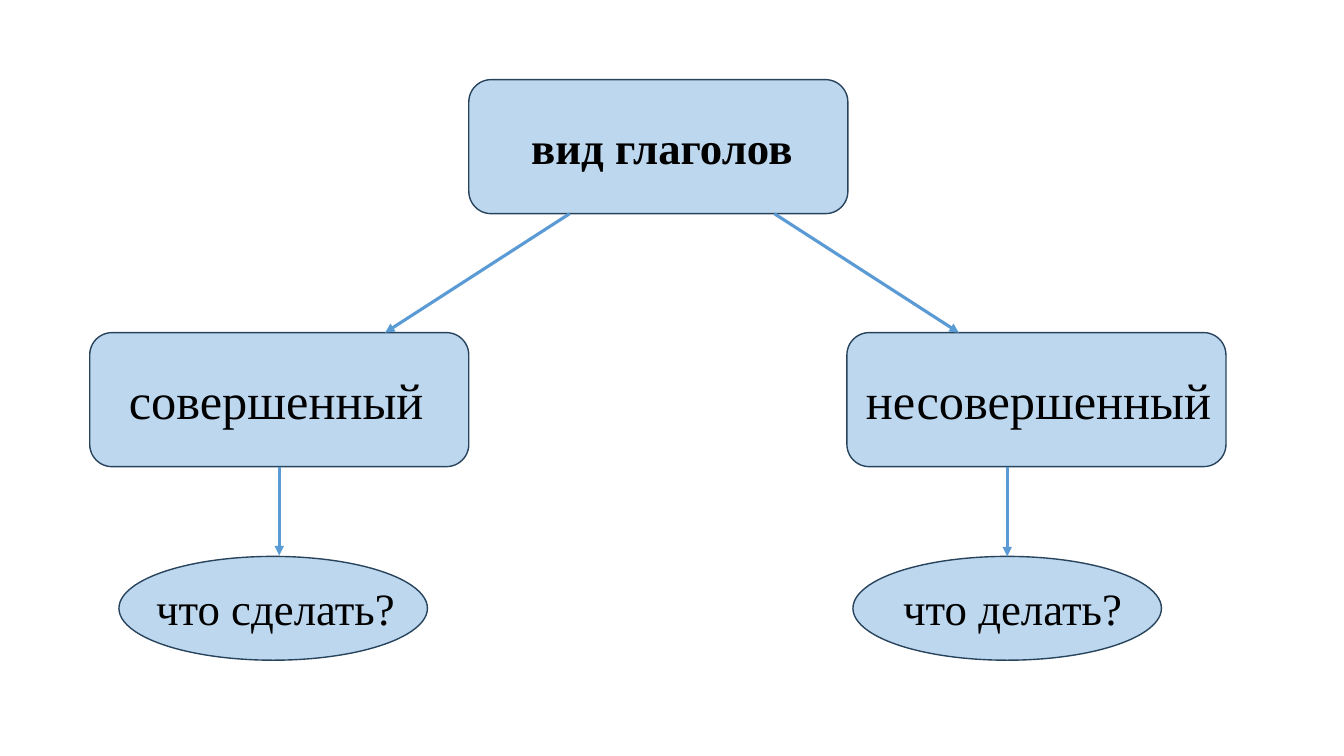
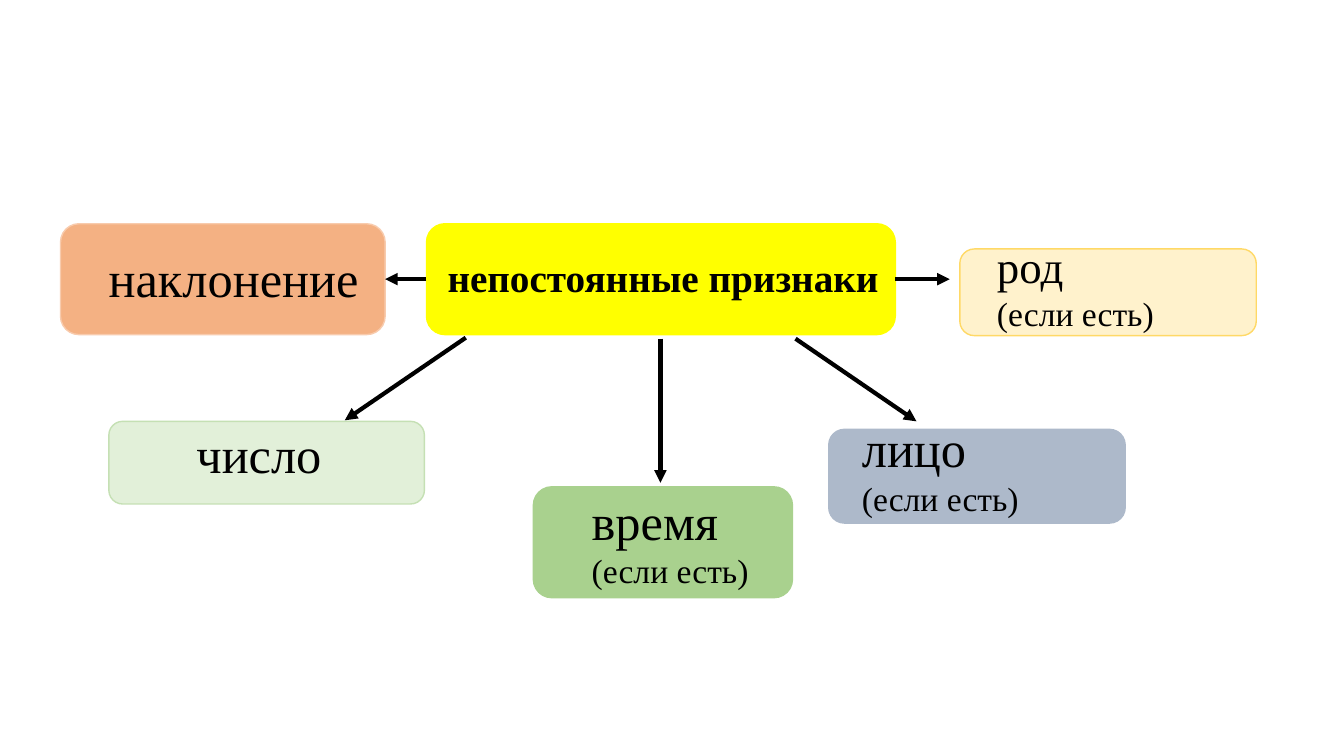
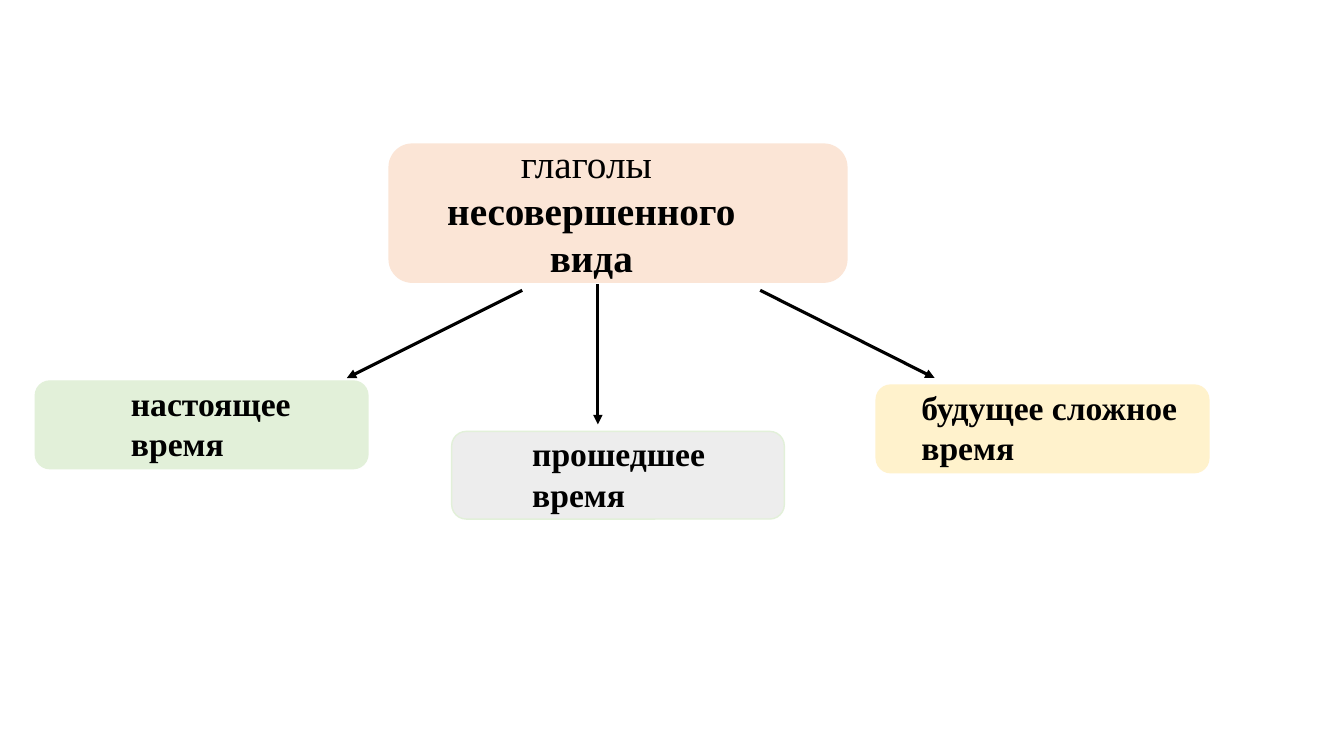
from lxml.etree import SubElement
from pptx import Presentation
from pptx.dml.color import RGBColor
from pptx.enum.shapes import MSO_CONNECTOR as Connector, MSO_SHAPE as Preset
from pptx.enum.text import MSO_AUTO_SIZE as AutoSize, PP_ALIGN as Align
from pptx.oxml.ns import qn
from pptx.util import Inches, Pt

FONT = "Times New Roman"
COLORS = {
    "black": "000000", "sky": "BDD7EE", "navy": "28445D", "blue": "5B9BD5",
    "green": "A9D18E", "mint": "E2F0D9", "leaf": "C5E0B4",
    "orange": "F4B183", "peach": "F8CBAD", "blush": "FBE5D6",
    "cream": "FFF2CC", "gold": "FFD966", "yellow": "FFFF00",
    "slate": "ADB9CA", "gray": "EDEDED",
}
TOP, LEFT, BOTTOM, RIGHT = range(4)
ROUND, OVAL = Preset.ROUNDED_RECTANGLE, Preset.OVAL

ASPECT_BOX = (3.76, 1.33)
QUESTION_OVAL = (3.06, 1.03)
TENSE_BOX = (3.3, 0.87)
IF_PRESENT = ("(если есть)", 24, False)

# node: name -> (preset, (left, top), (width, height), fill, outline)
# label: (left, top, width, height), alignment, [(text, size, bold)]
# arrow end: (x, y) or (node name, side)
SLIDES = [
    {
        "nodes": {
            "aspect": (ROUND, (4.65, 0.79), ASPECT_BOX, "sky", "navy"),
            "perfective": (ROUND, (0.89, 3.3), ASPECT_BOX, "sky", "navy"),
            "imperfective": (ROUND, (8.4, 3.3), ASPECT_BOX, "sky", "navy"),
            "perfective question": (OVAL, (1.18, 5.52), QUESTION_OVAL, "sky", "navy"),
            "imperfective question": (OVAL, (8.46, 5.52), QUESTION_OVAL, "sky", "navy"),
        },
        "arrow_style": ("blue", 2.25),
        "arrows": [
            ((5.65, 2.12), (3.82, 3.3)),
            ((7.68, 2.12), (9.51, 3.3)),
            (("perfective", BOTTOM), (2.77, 5.51)),
            ((9.99, 4.63), ("imperfective question", TOP)),
        ],
        "labels": [
            ((5.17, 1.14, 2.96, 0.64), Align.LEFT, [("вид глаголов", 32, True)]),
            ((1.18, 3.61, 3.46, 0.71), Align.LEFT, [("совершенный", 36, False)]),
            ((8.49, 3.61, 3.79, 0.71), Align.LEFT, [("несовершенный", 36, False)]),
            ((1.45, 5.71, 3.42, 0.64), Align.LEFT, [("что сделать?", 32, False)]),
            ((8.86, 5.71, 3.42, 0.64), Align.LEFT, [("что делать?", 32, False)]),
        ],
    },
    {
        "nodes": {
            "features": (ROUND, (4.23, 2.22), (4.65, 1.1), "yellow", "yellow"),
            "mood": (ROUND, (0.6, 2.22), (3.22, 1.1), "orange", "peach"),
            "number": (ROUND, (1.08, 4.18), (3.13, 0.82), "mint", "leaf"),
            "tense": (ROUND, (5.29, 4.83), (2.57, 1.1), "green", "green"),
            "person": (ROUND, (8.22, 4.26), (2.94, 0.93), "slate", "slate"),
            "gender": (ROUND, (9.52, 2.47), (2.94, 0.86), "cream", "gold"),
        },
        "arrow_style": ("black", 3),
        "arrows": [
            (("features", LEFT), ("mood", RIGHT)),
            ((4.62, 3.35), (3.42, 4.17)),
            ((6.55, 3.36), (6.55, 4.79)),
            ((7.89, 3.36), (9.09, 4.18)),
            (("features", RIGHT), (9.42, 2.77)),
        ],
        "labels": [
            ((4.34, 2.46, 4.65, 0.57), Align.LEFT, [("непостоянные признаки", 28, True)]),
            ((0.98, 2.4, 2.83, 0.71), Align.LEFT, [("наклонение", 36, False)]),
            ((1.85, 4.15, 1.69, 0.71), Align.LEFT, [("число", 36, False)]),
            ((5.77, 4.81, 3.79, 1.11), Align.LEFT, [("время", 36, False), IF_PRESENT]),
            ((8.45, 4.09, 2.71, 1.11), Align.LEFT, [("лицо", 36, False), IF_PRESENT]),
            ((9.79, 2.32, 2.94, 1.04), Align.LEFT, [("род", 32, False), IF_PRESENT]),
        ],
    },
    {
        "nodes": {
            "imperfective verbs": (ROUND, (3.86, 1.43), (4.54, 1.37), "blush", "blush"),
            "present": (ROUND, (0.35, 3.78), TENSE_BOX, "mint", "mint"),
            "past": (ROUND, (4.48, 4.28), TENSE_BOX, "gray", "mint"),
            "future": (ROUND, (8.69, 3.82), TENSE_BOX, "cream", "cream"),
        },
        "arrow_style": ("black", 2.25),
        "arrows": [
            ((5.18, 2.88), (3.44, 3.75)),
            ((5.93, 2.82), (5.93, 4.21)),
            ((7.54, 2.88), (9.27, 3.75)),
        ],
        "labels": [
            ((4.25, 1.33, 3.23, 1.51), Align.CENTER,
             [("глаголы ", 28, False), ("несовершенного вида", 28, True)]),
            ((1.2, 3.75, 2.61, 0.91), Align.LEFT,
             [("настоящее", 24, True), ("время", 24, True)]),
            ((5.18, 4.25, 2.61, 0.91), Align.LEFT,
             [("прошедшее", 24, True), ("время", 24, True)]),
            ((9.04, 3.79, 3.3, 0.91), Align.LEFT,
             [("будущее сложное", 24, True), ("время", 24, True)]),
        ],
    },
]


def rgb(color):
    return RGBColor.from_string(COLORS[color])


def add_node(slide, preset, corner, size, fill, outline):
    node = slide.shapes.add_shape(preset, *map(Inches, corner + size))
    node.shadow.inherit = False
    node.fill.solid()
    node.fill.fore_color.rgb = rgb(fill)
    node.line.color.rgb = rgb(outline)
    node.line.width = Pt(1)
    return node


def add_arrow(slide, nodes, start, end, color, width):
    """Draw an arrow, joining each end that names a node to its side."""
    free_ends = [(0, 0) if point[0] in nodes else point for point in (start, end)]
    arrow = slide.shapes.add_connector(
        Connector.STRAIGHT, *(Inches(value) for point in free_ends for value in point))
    for (target, side), join in ((start, arrow.begin_connect), (end, arrow.end_connect)):
        if target in nodes:
            join(nodes[target], side)
    arrow.line.color.rgb = rgb(color)
    arrow.line.width = Pt(width)
    SubElement(arrow.line._get_or_add_ln(), qn("a:tailEnd"), type="triangle")
    SubElement(arrow._element.spPr, qn("a:effectLst"))


def add_label(slide, box, alignment, lines):
    frame = slide.shapes.add_textbox(*map(Inches, box)).text_frame
    frame.word_wrap = True
    frame.auto_size = AutoSize.SHAPE_TO_FIT_TEXT
    frame.text = "\n".join(text for text, _, _ in lines)
    for paragraph, (_, size, bold) in zip(frame.paragraphs, lines):
        paragraph.alignment = alignment
        font = paragraph.runs[0].font
        font.name, font.size, font.bold = FONT, Pt(size), bold
        font.color.rgb = rgb("black")


def main():
    deck = Presentation()
    deck.slide_width, deck.slide_height = Inches(13.33), Inches(7.5)
    blank = deck.slide_layouts[6]
    for content in SLIDES:
        slide = deck.slides.add_slide(blank)
        nodes = {name: add_node(slide, *node) for name, node in content["nodes"].items()}
        for start, end in content["arrows"]:
            add_arrow(slide, nodes, start, end, *content["arrow_style"])
        for label in content["labels"]:
            add_label(slide, *label)
    deck.save("out.pptx")


if __name__ == "__main__":
    main()
